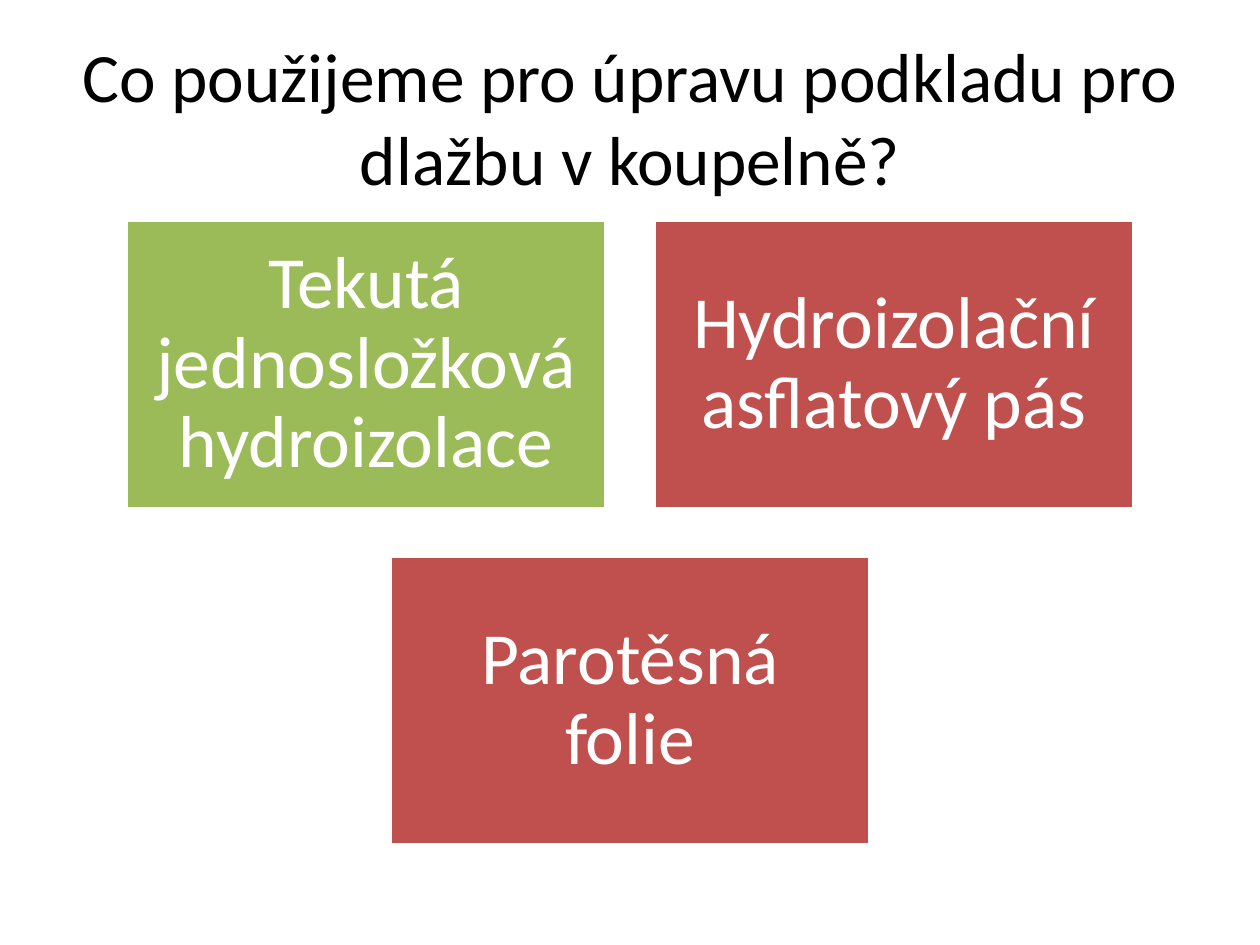
from pptx import Presentation
from pptx.dml.color import RGBColor
from pptx.enum import shapes, text
from pptx.util import Pt

PAGE_WIDTH, PAGE_HEIGHT = 720, 540
CARD_WIDTH, CARD_HEIGHT, GAP = 274.3, 164.6, 27.4
CARDS_TOP = 126
GREEN, RED, WHITE, BLACK = "9BBB59", "C0504D", "FFFFFF", "000000"

ROWS = [
    [("Tekutá jednosložková hydroizolace", GREEN),
     ("Hydroizolační asflatový pás", RED)],
    [("Parotěsná folie", RED)],
]


def color(value):
    return RGBColor.from_string(value)


def write(box, words, size, ink, margins, spacing=None):
    """Put one centred paragraph in the middle of a box."""
    frame = box.text_frame
    frame.word_wrap = True
    frame.vertical_anchor = text.MSO_ANCHOR.MIDDLE
    frame.margin_left = frame.margin_right = Pt(margins[0])
    frame.margin_top = frame.margin_bottom = Pt(margins[1])
    para = frame.paragraphs[0]
    para.text = words
    para.alignment = text.PP_ALIGN.CENTER
    para.line_spacing = spacing
    para.font.name = "Calibri"
    para.font.size = Pt(size)
    para.font.color.rgb = color(ink)


def add_title(page, words):
    box = page.shapes.add_textbox(Pt(36), Pt(21.6), Pt(648), Pt(90))
    write(box, words, 39.6, BLACK, (7.2, 3.6))


def add_card(page, left, top, words, fill):
    card = page.shapes.add_shape(
        shapes.MSO_SHAPE.RECTANGLE,
        Pt(left), Pt(top), Pt(CARD_WIDTH), Pt(CARD_HEIGHT))
    card.shadow.inherit = False
    card.fill.solid()
    card.fill.fore_color.rgb = color(fill)
    card.line.color.rgb = color(WHITE)
    card.line.width = Pt(2)
    write(card, words, 42, WHITE, (12.6, 12.6), spacing=0.9)


def add_cards(page):
    """Stack the rows, each centred on the page."""
    for row, cards in enumerate(ROWS):
        row_width = len(cards) * (CARD_WIDTH + GAP) - GAP
        left = (PAGE_WIDTH - row_width) / 2
        top = CARDS_TOP + row * (CARD_HEIGHT + GAP)
        for column, (words, fill) in enumerate(cards):
            add_card(page, left + column * (CARD_WIDTH + GAP), top, words, fill)


def main():
    deck = Presentation()
    deck.slide_width, deck.slide_height = Pt(PAGE_WIDTH), Pt(PAGE_HEIGHT)
    page = deck.slides.add_slide(deck.slide_layouts[6])

    # Question
    add_title(page, "Co použijeme pro úpravu podkladu pro dlažbu v koupelně?")

    # Answers: the right one is green
    add_cards(page)

    deck.save("out.pptx")


if __name__ == "__main__":
    main()
